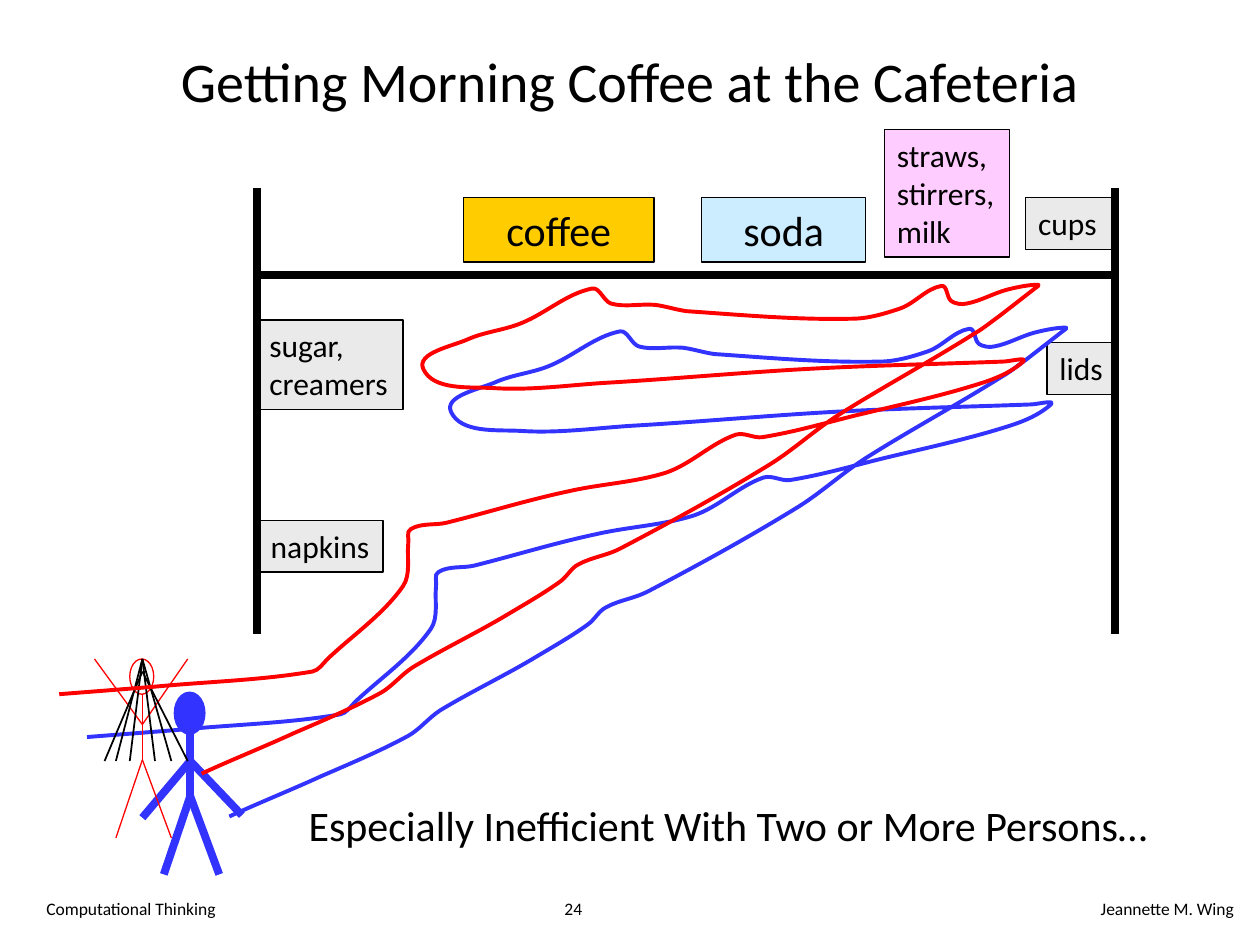
from math import dist

from lxml import etree
from pptx import Presentation
from pptx.dml.color import RGBColor
from pptx.enum.shapes import MSO_CONNECTOR, MSO_SHAPE
from pptx.enum.text import MSO_ANCHOR, PP_ALIGN
from pptx.oxml.ns import qn
from pptx.util import Pt

PX = 9144  # 100 px to the inch
FONT = "Calibri"
LEFT, CENTER, RIGHT = PP_ALIGN.LEFT, PP_ALIGN.CENTER, PP_ALIGN.RIGHT
RECT, OVAL = MSO_SHAPE.RECTANGLE, MSO_SHAPE.OVAL
TOP, MIDDLE = MSO_ANCHOR.TOP, MSO_ANCHOR.MIDDLE
STRAIGHT = MSO_CONNECTOR.STRAIGHT
COLORS = {"black": "000000", "blue": "3333FF", "red": "FF0000", "gold": "FFCC00",
          "sky": "CCECFF", "grey": "EAEAEA", "pink": "FFCCFF"}

TITLE = ("Getting Morning Coffee at the Cafeteria", (75, 26, 850, 75))
# text, box, size, alignment, wrap
TEXTS = [
    ("24", (351, 708, 208, 33), 10, CENTER, True),
    ("Computational Thinking", (27, 708, 208, 33), 10, LEFT, True),
    ("Jeannette M. Wing", (691, 708, 298, 33), 10, RIGHT, True),
    ("Especially Inefficient With Two or More Persons…", (235, 630, 691, 50), 24, LEFT, False),
]
# text, box, fill, size, alignment
STATIONS = [
    ("coffee", (368, 157, 151, 51), "gold", 24, CENTER),
    ("soda", (557, 157, 130, 51), "sky", 24, CENTER),
    ("sugar,\vcreamers", (204, 254, 116, 71), "grey", 18, LEFT),
    ("napkins", (205, 413, 99, 41), "grey", 18, LEFT),
    ("cups", (814, 157, 68, 41), "grey", 18, LEFT),
    ("lids", (831, 272, 56, 41), "grey", 18, LEFT),
    ("straws,\vstirrers,\vmilk", (702, 103, 99, 101), "pink", 18, LEFT),
]
WALL_LEFT, WALL_RIGHT, WALL_TOP, WALL_BOTTOM, COUNTER = 204, 885, 149, 503, 218

# centre x, top of head, shoulder below top, arm ends from shoulder
MAN = (151, 552, 52, [(41, 43), (-38, 45)])
WOMAN = (113, 523, 52, [(36, -52), (-38, -52)])
HEAD_W, HEAD_H, HIP = 19, 28, 80
LEGS = [(-21, 62), (23, 62)]
# hair root below top, ends across
HAIR = [(0, (-21, -10, 10, 23)), (10, (36, -30))]
HAIR_LENGTH = 81

# Walking route from the person, round the counter and out
ROUTE = [
    (182, 648), (255, 616), (324, 584), (349, 564), (421, 524), (466, 496),
    (481, 482), (515, 469), (634, 402), (688, 363), (795, 299), (815, 285),
    (842, 264), (846, 260), (821, 264), (789, 275), (777, 273), (769, 261),
    (736, 279), (698, 287), (567, 281), (542, 276), (507, 275), (492, 263),
    (437, 290), (394, 303), (358, 327), (413, 342), (500, 338), (660, 327),
    (818, 321), (834, 321), (798, 339), (700, 364), (627, 381), (606, 379),
    (551, 409), (473, 424), (376, 449), (348, 454), (346, 466), (342, 499),
    (282, 557), (270, 567), (145, 579), (69, 585),
]
RED_SHIFT = (-22, -34)


def rgb(name):
    return RGBColor.from_string(COLORS[name])


def emu(box):
    return [v * PX for v in box]


def write(sp, text, size, align, wrap, anchor=TOP):
    tf = sp.text_frame
    tf.word_wrap, tf.vertical_anchor = wrap, anchor
    p = tf.paragraphs[0]
    p.text, p.alignment = text, align
    for name, value in {"name": FONT, "size": Pt(size)}.items():
        setattr(p.font, name, value)
    p.font.color.rgb = rgb("black")


def set_line(sp, color, width):
    sp.line.color.rgb = rgb(color)
    sp.line.width = Pt(width)


def add_shape(shapes, kind, box, fill, color, width):
    sp = shapes.add_shape(kind, *emu(box))
    sp.shadow.inherit = False
    if fill:
        sp.fill.solid()
        sp.fill.fore_color.rgb = rgb(fill)
    else:
        sp.fill.background()
    set_line(sp, color, width)
    return sp


def add_line(shapes, ends, color, width):
    line = shapes.add_connector(STRAIGHT, *emu(ends))
    set_line(line, color, width)
    etree.SubElement(line._element.spPr, qn("a:effectLst"))


def add_person(shapes, person, fill, color, width):
    x, top, shoulder, arms = person
    add_shape(shapes, OVAL, (x - HEAD_W // 2 - 1, top, HEAD_W, HEAD_H), fill, color, width)
    add_line(shapes, (x, top + HEAD_H, x, top + HIP), color, width)
    for joint, limbs in ((HIP, LEGS), (shoulder, arms)):
        y = top + joint
        for dx, dy in limbs:
            add_line(shapes, (x, y, x + dx, y + dy), color, width)


def smooth(points):
    """Return two controls and an end for each span of a curve through the points."""
    padded = points[:1] + points + points[-1:]
    result = []
    for before, a, b, after in zip(padded, padded[1:], padded[2:], padded[3:]):
        reach = dist(a, b) / 3
        out, back = reach / dist(before, b), reach / dist(a, after)
        result += [tuple(a[i] + (b[i] - before[i]) * out for i in (0, 1)),
                   tuple(b[i] - (after[i] - a[i]) * back for i in (0, 1)), b]
    return result


def add_route(shapes, color, dx=0, dy=0):
    """Draw the route through all its points, then join each three as a cubic curve."""
    points = [(x + dx, y + dy) for x, y in ROUTE]
    fb = shapes.build_freeform(*points[0], scale=PX)
    fb.add_line_segments([(round(x), round(y)) for x, y in smooth(points)], close=False)
    sp = fb.convert_to_shape()
    sp.shadow.inherit = False
    sp.fill.background()
    set_line(sp, color, 2.25)
    outline = sp._element.find(".//" + qn("a:path"))
    segments = outline.findall(qn("a:lnTo"))
    for i in range(0, len(segments), 3):
        curve = etree.SubElement(outline, qn("a:cubicBezTo"))
        for segment in segments[i:i + 3]:
            curve.append(segment[0])
            outline.remove(segment)


def main():
    prs = Presentation()
    prs.slide_width, prs.slide_height = emu((1000, 750))
    s = prs.slides.add_slide(prs.slide_layouts[5])
    shapes = s.shapes

    text, box = TITLE
    title = shapes.title
    title.left, title.top, title.width, title.height = emu(box)
    write(title, text, 32, CENTER, True, MIDDLE)

    for text, box, size, align, wrap in TEXTS:
        write(shapes.add_textbox(*emu(box)), text, size, align, wrap)
    for text, box, fill, size, align in STATIONS:
        write(add_shape(shapes, RECT, box, fill, "black", 0.75), text, size, align, False)
    for x in (WALL_RIGHT, WALL_LEFT):
        add_line(shapes, (x, WALL_TOP, x, WALL_BOTTOM), "black", 4.5)
    add_line(shapes, (WALL_RIGHT, COUNTER, WALL_LEFT, COUNTER), "black", 4.5)

    add_route(shapes, "blue")
    add_person(shapes, MAN, "blue", "blue", 4.5)
    add_person(shapes, WOMAN, None, "red", 0.75)
    x, top = WOMAN[:2]
    for root, ends in HAIR:
        for dx in ends:
            add_line(shapes, (x, top + root, x + dx, top + HAIR_LENGTH), "black", 1)
    add_route(shapes, "red", *RED_SHIFT)

    prs.save("out.pptx")


if __name__ == "__main__":
    main()
